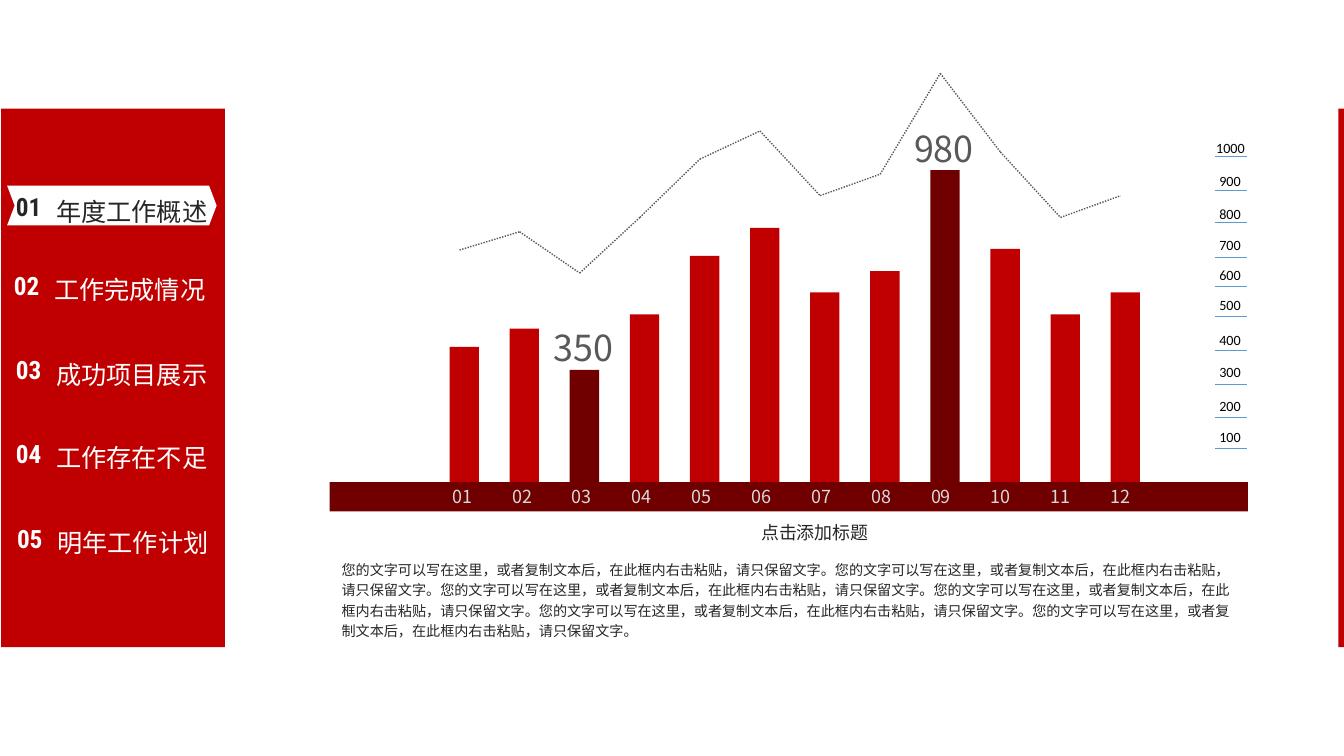
"""Build a yearly work report slide: side menu, monthly bars, trend line and scale."""
from lxml import etree
from pptx import Presentation
from pptx.dml.color import RGBColor
from pptx.enum import dml, shapes, text
from pptx.oxml import ns
from pptx.util import Cm, Pt

RED, DARK, GREY, INK, WHITE = "C00000", "700000", "595959", "262626", "FFFFFF"
SANS = "Noto Sans CJK SC"
hue = RGBColor.from_string

deck = Presentation()
deck.slide_width, deck.slide_height = Cm(33.87), Cm(19.05)
slide = deck.slides.add_slide(deck.slide_layouts[6])


def write(words, place, size, face, tone, wrap=True, bold=False, **form):
    box = slide.shapes.add_textbox(*map(Cm, place))
    frame = box.text_frame
    frame.word_wrap = wrap
    frame.auto_size = text.MSO_AUTO_SIZE.SHAPE_TO_FIT_TEXT
    para = frame.paragraphs[0]
    for key, value in form.items():
        setattr(para, key, value)
    run = para.add_run()
    run.text = words
    for key, value in dict(size=Pt(size), name=face, bold=bold).items():
        setattr(run.font, key, value)
    run.font.color.rgb = hue(tone)
    east = etree.SubElement(run.font._element, ns.qn("a:ea"))
    east.set("typeface", face)


mid = text.PP_ALIGN.CENTER
base, wide = 12.15, 0.74
tops = [8.74, 8.28, 9.32, 7.92, 6.45, 5.74, 7.37, 6.83, 4.29, 6.27, 7.92, 7.37]
step = 16.66 / 11
peaks = {2: "350", 8: "980"}

blocks = [("RECTANGLE", (0.03, 2.74, 5.64, 13.57), RED),
          ("CHEVRON", (0.18, 4.68, 5.28, 1), WHITE)]
for i, top in enumerate(tops):
    tone = DARK if i in peaks else RED
    blocks.append(("RECTANGLE", (11.33 + i * step, top, wide, base - top), tone))
blocks += [("RECTANGLE", (8.31, base, 23.14, wide), DARK),
           ("RECTANGLE", (33.73, 2.74, 0.14, 13.57), RED)]

for kind, place, tone in blocks:
    block = slide.shapes.add_shape(shapes.MSO_SHAPE[kind], *map(Cm, place))
    block.shadow.inherit = False
    block.fill.solid()
    block.fill.fore_color.rgb = hue(tone)
    block.line.fill.background()
    if kind == "CHEVRON":
        block.adjustments[0] = 0.19

menu = [("年度工作概述", 0.15, 4.7), ("工作完成情况", 0.1, 6.68),
        ("成功项目展示", 0.15, 8.81), ("工作存在不足", 0.15, 10.92),
        ("明年工作计划", 0.18, 13.06)]
for i, (title, left, top) in enumerate(menu):
    tone = WHITE if i else INK
    write(f"{i + 1:02}", (left, top, 1.42, 1.02), 18, "Roboto Condensed", tone, bold=True)
    write(title, (left + 0.58, top - 0.27, 5.18, 1.27), 18, "Open Sans", tone,
          alignment=mid, line_spacing=1.5)

for i in range(len(tops)):
    write(f"{i + 1:02}", (11.13 + i * 16.59 / 11, 12.12, 1.04, 0.81), 12.8, SANS,
          "D9D9D9", wrap=False, alignment=mid)
for i, value in peaks.items():
    write(value, (10.67 + i * step, tops[i] - 1.23, 2.11, 1.35), 25.6, SANS, GREY, wrap=False)

lines = []
ticks = [(11.3, 10.67), (10.52, 9.88), (9.68, 9.04), (8.84, 8.23), (7.98, 7.34),
         (7.21, 6.6), (6.48, 5.84), (5.61, 5.05), (4.8, 4.22), (3.94, 3.4)]
for i, (rule, top) in enumerate(ticks, 1):
    lines.append(((31.42, rule, 30.61, rule), "5B9BD5", 0.5, dml.MSO_LINE.SOLID))
    left, width = (30.4, 1.24) if i == 10 else (30.48, 1.07)
    write(str(i * 100), (left, top, width, 0.69), 10.1, "Calibri", "000000", wrap=False)

trend = [(11.58 + i * step, top - 2.44) for i, top in enumerate(tops)]
for start, end in zip(trend, trend[1:]):
    lines.append((start + end, GREY, 1, dml.MSO_LINE.ROUND_DOT))

for ends, tone, width, dash in lines:
    line = slide.shapes.add_connector(shapes.MSO_CONNECTOR.STRAIGHT, *map(Cm, ends))
    line.line.color.rgb = hue(tone)
    for key, value in dict(width=Pt(width), dash_style=dash).items():
        setattr(line.line, key, value)
    etree.SubElement(line._element.spPr, ns.qn("a:effectLst"))

write("点击添加标题", (13.87, 13.03, 13.34, 0.81), 12.8, SANS, INK, alignment=mid)
note = "您的文字可以写在这里，或者复制文本后，在此框内右击粘贴，请只保留文字。"
write(note * 6, (8.36, 13.92, 22.96, 2.39), 10.1, SANS, INK, line_spacing=Pt(14.7))

deck.save("out.pptx")
